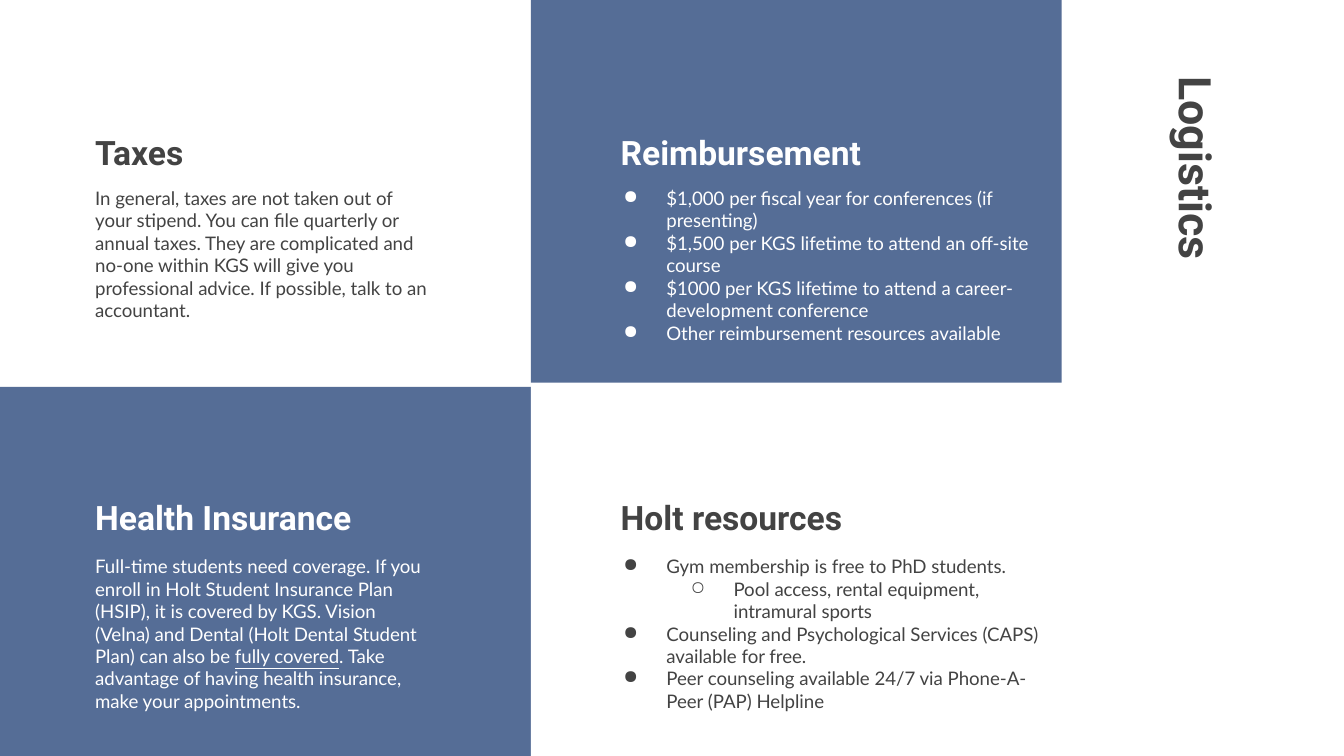
from lxml import etree
from pptx import Presentation
from pptx.dml.color import RGBColor
from pptx.enum import shapes, text
from pptx.oxml.ns import qn
from pptx.util import Pt

HUE = {"blue": "556D96", "white": "FFFFFF", "dark": "434343"}
HEAD = {"name": "Roboto", "size": Pt(18), "bold": True}
NAME = {**HEAD, "size": Pt(24)}
BODY = {"name": "Lato", "size": Pt(10)}
PAD = {f"margin_{side}": Pt(7.2) for side in ("left", "right", "top", "bottom")}
MARKS = "●○"

# Grid of panels
WIDE, MID, TALL = 284.4, 207.36, 405
ROWS = [  # top, height, heading offset, body offset
    (0, 205, 48.24, 92.88),
    (MID, TALL - MID, 36.72, 82.8),
]
COLS = [  # heading inset, heading width, body inset, body width
    (43.92, 226, 43.92, 195.12),
    (41.04, 212.4, 29.52, 255.6),
]

# Row, column, fill, ink, heading, body as (level, text); level None is plain,
# and underscores enclose underlined words
PANELS = [
    (0, 0, None, "dark", "Taxes", [
        (None, "In general, taxes are not taken out of your stipend. You can file "
               "quarterly or annual taxes. They are complicated and no-one within KGS "
               "will give you professional advice. If possible, talk to an accountant.")]),
    (0, 1, "blue", "white", "Reimbursement", [
        (0, "$1,000 per fiscal year for conferences (if presenting)"),
        (0, "$1,500 per KGS lifetime to attend an off-site course"),
        (0, "$1000 per KGS lifetime to attend a career-development conference"),
        (0, "Other reimbursement resources available")]),
    (1, 0, "blue", "white", "Health Insurance", [
        (None, "Full-time students need coverage. If you enroll in Holt Student Insurance "
               "Plan (HSIP), it is covered by KGS. Vision (Velna) and Dental (Holt Dental "
               "Student Plan) can also be _fully covered_. Take advantage of having health "
               "insurance, make your appointments.")]),
    (1, 1, "white", "dark", "Holt resources", [
        (0, "Gym membership is free to PhD students."),
        (1, "Pool access, rental equipment, intramural sports"),
        (0, "Counseling and Psychological Services (CAPS) available for free."),
        (0, "Peer counseling available 24/7 via Phone-A-Peer (PAP) Helpline")]),
]


def style(item, form):
    for key, value in form.items():
        setattr(item, key, value)


def bullet(para, level, ink):
    para.level = level
    props = para._p.get_or_add_pPr()
    props.set("marL", str(Pt(36 * (level + 1))))
    props.set("indent", str(Pt(-23)))
    tint = etree.SubElement(props, qn("a:buClr"))
    etree.SubElement(tint, qn("a:srgbClr"), val=HUE[ink])
    etree.SubElement(props, qn("a:buChar"), char=MARKS[level])


def write(slide, box, lines, form, ink, anchor):
    label = slide.shapes.add_textbox(*map(Pt, box))
    frame = label.text_frame
    style(frame, {**PAD, "word_wrap": True, "vertical_anchor": anchor})
    for i, (level, line) in enumerate(lines):
        para = frame.add_paragraph() if i else frame.paragraphs[0]
        if level is not None:
            bullet(para, level, ink)
        for j, part in enumerate(line.split("_")):
            run = para.add_run()
            run.text = part
            style(run.font, form)
            run.font.color.rgb = RGBColor.from_string(HUE[ink])
            if j % 2:
                run.font.underline = True
    return label


def panel(slide, box, spots, fill, ink, head, body):
    left, top, wide, tall = box
    (headx, headw, bodyx, bodyw), (heady, bodyy) = spots
    # Background block
    if fill:
        block = slide.shapes.add_shape(shapes.MSO_SHAPE.RECTANGLE, *map(Pt, box))
        block.shadow.inherit = False
        block.fill.solid()
        block.fill.fore_color.rgb = RGBColor.from_string(HUE[fill])
        block.line.fill.background()
    # Heading and body
    write(slide, (left + headx, top + heady, headw, 51.12),
          [(None, head)], HEAD, ink, text.MSO_ANCHOR.BOTTOM)
    write(slide, (left + bodyx, top + bodyy, bodyw, tall - bodyy),
          body, BODY, ink, text.MSO_ANCHOR.TOP)


def title(slide, box):
    label = write(slide, box, [(None, "Logistics")], NAME, "dark", text.MSO_ANCHOR.MIDDLE)
    label.rotation = 90


def main():
    deck = Presentation()
    deck.slide_width, deck.slide_height = Pt(720), Pt(TALL)
    slide = deck.slides.add_slide(deck.slide_layouts[6])
    for row, col, fill, ink, head, body in PANELS:
        top, tall, *drops = ROWS[row]
        panel(slide, (col * WIDE, top, WIDE, tall), (COLS[col], drops),
              fill, ink, head, body)
    title(slide, (526.32, 129.6, 229.68, 38.16))
    deck.save("out.pptx")


if __name__ == "__main__":
    main()
